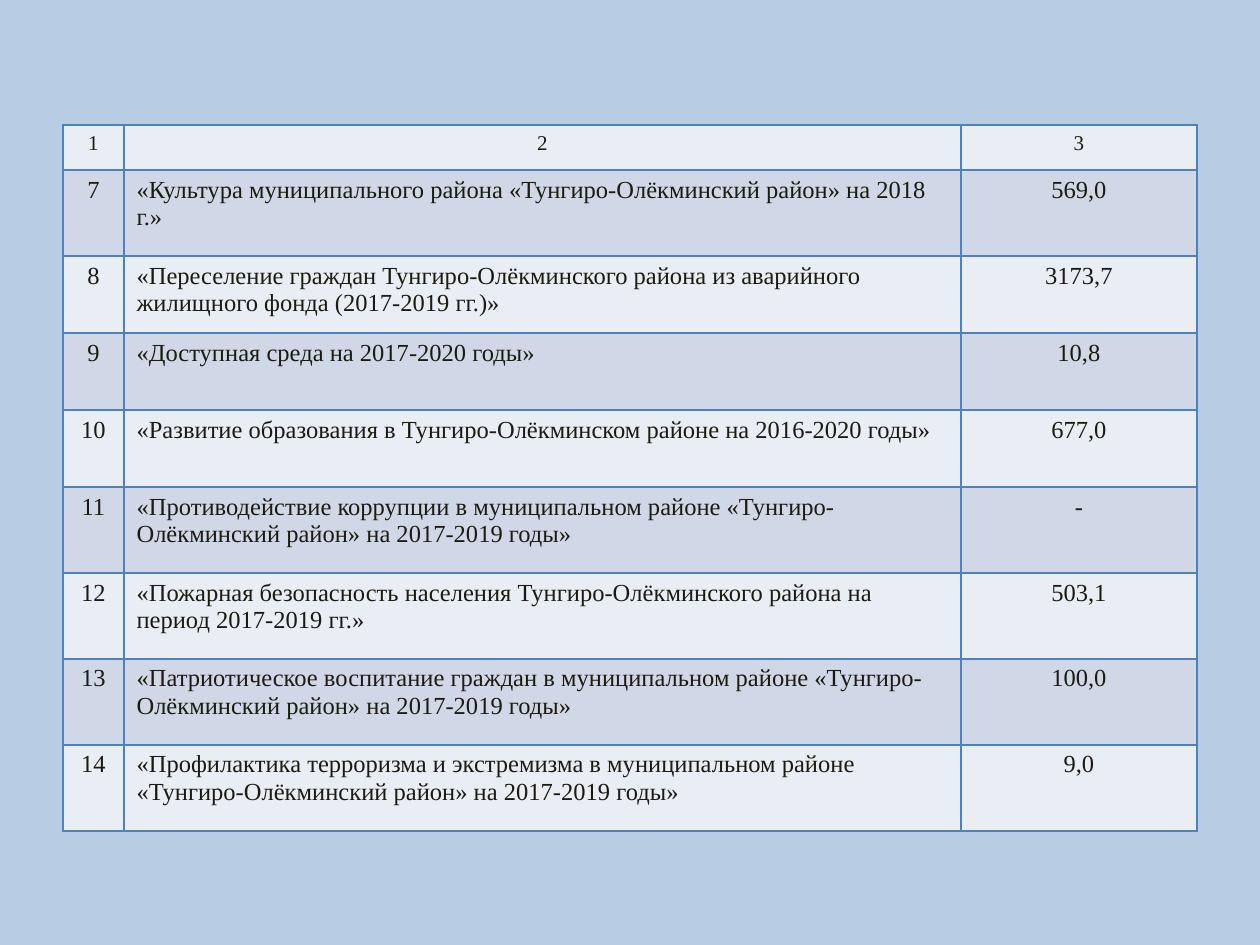
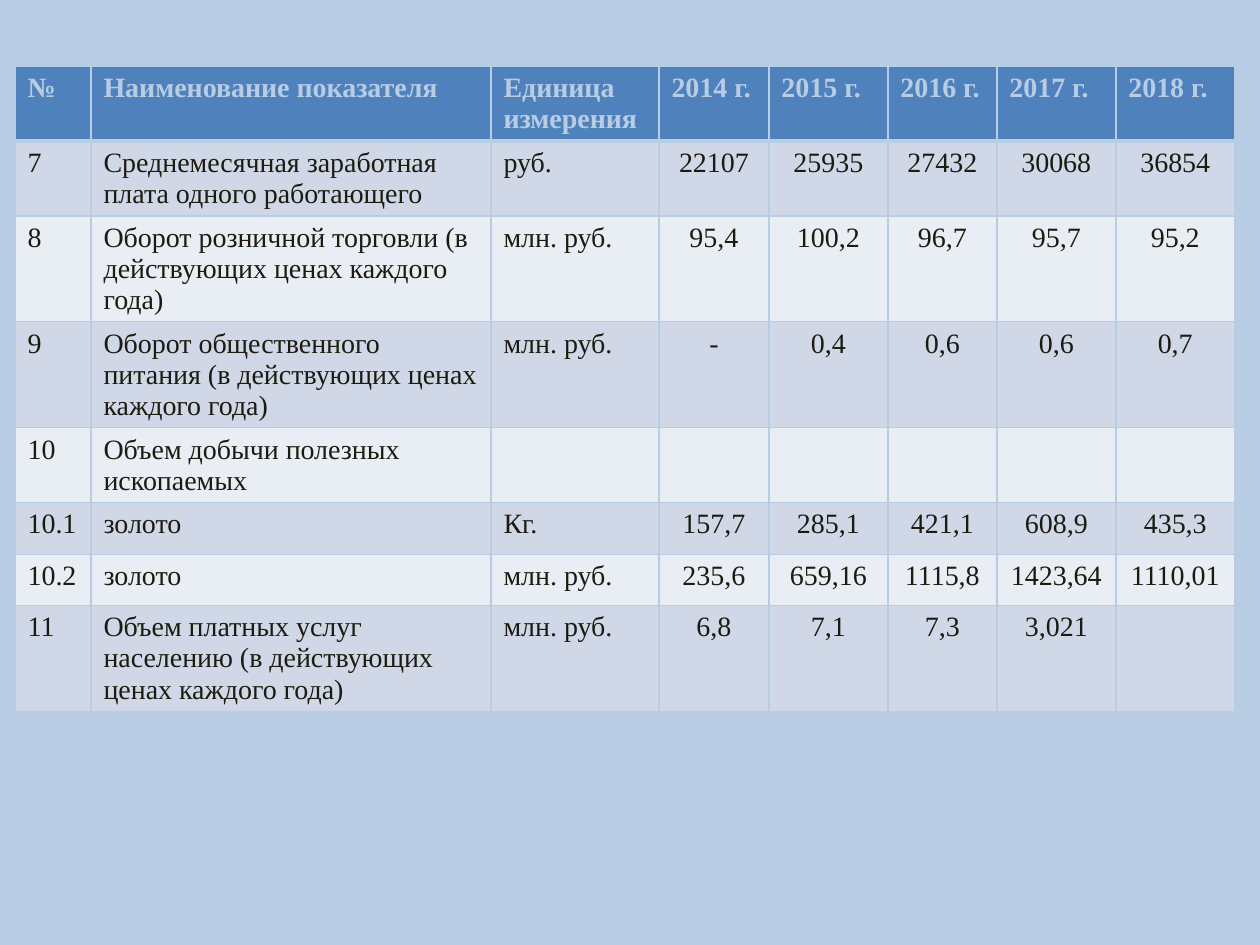
from dataclasses import dataclass

from lxml import etree
from pptx import Presentation
from pptx import util as u
from pptx.dml.color import RGBColor
from pptx.enum import text
from pptx.oxml import ns

SCALE = u.Inches(1) / 126
WIDE, HIGH = 1260, 945
BLANK = 6
HUES = {
    "back": "B8CCE4",
    "head": "4F81BD",
    "pale": "E9EDF4",
    "dark": "D0D8E8",
    "ink": "1D1B10",
}
FACE = {"name": "Times New Roman", "bold": False}
THIN, THICK = 1, 3


@dataclass
class Grid:
    left: int
    top: int
    cols: list[int]
    rows: list[int]
    cells: list[tuple[str, ...]]
    line: str
    size: int
    first: int
    mid: set[int]
    head: bool


PLANS = Grid(
    left=63, top=125,
    cols=[61, 837, 236],
    rows=[45, 86, 77, 77, 77, 86, 86, 86, 86],
    cells=[
        ("1", "2", "3"),
        ("7", "«Культура муниципального района «Тунгиро-Олёкминский район» на 2018 г.»", "569,0"),
        ("8", "«Переселение граждан Тунгиро-Олёкминского района из аварийного "
              "жилищного фонда (2017-2019 гг.)»", "3173,7"),
        ("9", "«Доступная среда на 2017-2020 годы»", "10,8"),
        ("10", "«Развитие образования в Тунгиро-Олёкминском районе на 2016-2020 годы»", "677,0"),
        ("11", "«Противодействие коррупции в муниципальном районе "
               "«Тунгиро-Олёкминский район» на 2017-2019 годы»", "-"),
        ("12", "«Пожарная безопасность населения Тунгиро-Олёкминского района "
               "на период 2017-2019 гг.»", "503,1"),
        ("13", "«Патриотическое воспитание граждан в муниципальном районе "
               "«Тунгиро-Олёкминский район» на 2017-2019 годы»", "100,0"),
        ("14", "«Профилактика терроризма и экстремизма в муниципальном районе "
               "«Тунгиро-Олёкминский район» на 2017-2019 годы»", "9,0"),
    ],
    line="head", size=14, first=12, mid={0, 2}, head=False,
)

STATS = Grid(
    left=15, top=66,
    cols=[76, 400, 168, 110, 119, 109, 119, 119],
    rows=[74, 75, 106, 106, 74, 52, 51, 106],
    cells=[
        ("№", "Наименование показателя", "Единица измерения",
         *(f"{year} г." for year in range(2014, 2019))),
        ("7", "Среднемесячная заработная плата одного работающего", "руб.",
         "22107", "25935", "27432", "30068", "36854"),
        ("8", "Оборот розничной торговли (в действующих ценах каждого года)", "млн. руб.",
         "95,4", "100,2", "96,7", "95,7", "95,2"),
        ("9", "Оборот общественного питания (в действующих ценах каждого года)", "млн. руб.",
         "-", "0,4", "0,6", "0,6", "0,7"),
        ("10", "Объем добычи полезных ископаемых", "", "", "", "", "", ""),
        ("10.1", "золото", "Кг.", "157,7", "285,1", "421,1", "608,9", "435,3"),
        ("10.2", "золото", "млн. руб.", "235,6", "659,16", "1115,8", "1423,64", "1110,01"),
        ("11", "Объем платных услуг населению (в действующих ценах каждого года)", "млн. руб.",
         "6,8", "7,1", "7,3", "3,021", ""),
    ],
    line="back", size=16, first=16, mid=set(range(3, 8)), head=True,
)


def px(size: int) -> int:
    return round(size * SCALE)


def tint(name: str) -> RGBColor:
    return RGBColor.from_string(HUES[name])


def edge(cell, hue: str, top: int, low: int) -> None:
    """Give the cell four borders, placed ahead of its fill."""
    props = cell._tc.get_or_add_tcPr()
    sides = {"lnL": THIN, "lnR": THIN, "lnT": top, "lnB": low}
    for spot, (tag, width) in enumerate(sides.items()):
        line = etree.Element(ns.qn(f"a:{tag}"), w=str(u.Pt(width)))
        fill = etree.SubElement(line, ns.qn("a:solidFill"))
        etree.SubElement(fill, ns.qn("a:srgbClr"), val=HUES[hue])
        props.insert(spot, line)


def write(cell, words: str, mid: bool, ink: str, form: dict) -> None:
    para = cell.text_frame.paragraphs[0]
    para.alignment = text.PP_ALIGN.CENTER if mid else text.PP_ALIGN.LEFT
    if not words:
        return
    run = para.add_run()
    run.text = words
    for key, value in form.items():
        setattr(run.font, key, value)
    run.font.color.rgb = tint(ink)


def draw(slide, grid: Grid) -> None:
    frame = slide.shapes.add_table(
        len(grid.rows), len(grid.cols), px(grid.left), px(grid.top),
        px(sum(grid.cols)), px(sum(grid.rows)))
    table = frame.table
    table.first_row = grid.head
    for col, width in zip(table.columns, grid.cols):
        col.width = px(width)
    for row, height in zip(table.rows, grid.rows):
        row.height = px(height)
    for y, line in enumerate(grid.cells):
        head = grid.head and y == 0
        fill = "head" if head else ("pale", "dark")[y % 2]
        form = FACE | {"size": u.Pt(grid.size if y else grid.first), "bold": head}
        top = THICK if grid.head and y == 1 else THIN
        for x, words in enumerate(line):
            cell = table.cell(y, x)
            cell.fill.solid()
            cell.fill.fore_color.rgb = tint(fill)
            edge(cell, grid.line, top, THICK if head else THIN)
            mid = not head and (x in grid.mid or y == 0)
            write(cell, words, mid, "back" if head else "ink", form)


def main() -> None:
    deck = Presentation()
    deck.slide_width, deck.slide_height = px(WIDE), px(HIGH)
    for grid in (PLANS, STATS):
        slide = deck.slides.add_slide(deck.slide_layouts[BLANK])
        slide.background.fill.solid()
        slide.background.fill.fore_color.rgb = tint("back")
        draw(slide, grid)
    deck.save("out.pptx")


if __name__ == "__main__":
    main()
